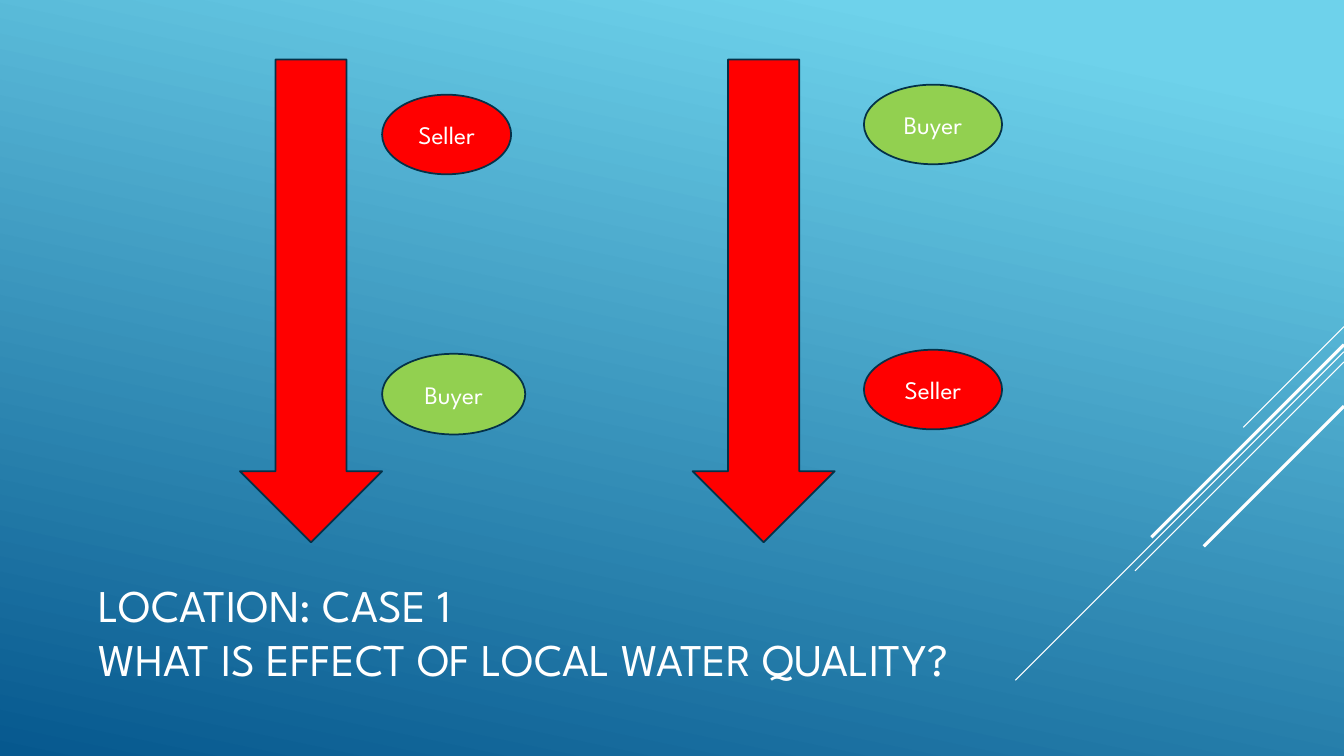
from dataclasses import dataclass

import pptx
import pptx.dml.color
import pptx.enum.shapes
import pptx.enum.text
import pptx.oxml
import pptx.oxml.ns
import pptx.util
from pptx.shapes.autoshape import Shape
from pptx.slide import Slide
from pptx.text.text import _Paragraph

WIDTH = pptx.util.Inches(13.333)
HEIGHT = pptx.util.Inches(7.5)


@dataclass(frozen=True)
class Theme:
    font: str = "League Spartan"
    text: str = "FFFFFF"
    sky: str = "6ED2EB"
    deep: str = "06588E"
    outline: str = "043148"
    seller: str = "FF0000"
    buyer: str = "92D050"
    flow: str = "FF0000"
    title_size: float = 32.4
    title_leading: float = 38.6
    label_size: float = 18
    outline_width: float = 1.25


THEME = Theme()


# Lengths are percentages of the slide's width and height
@dataclass(frozen=True)
class Box:
    left: float
    top: float
    width: float
    height: float


@dataclass(frozen=True)
class Party:
    name: str
    colour: str
    box: Box


@dataclass(frozen=True)
class Ray:
    top: float
    run: float
    weight: float


def across(share: float) -> int:
    return round(WIDTH * share / 100)


def down(share: float) -> int:
    return round(HEIGHT * share / 100)


def rgb(colour: str) -> pptx.dml.color.RGBColor:
    return pptx.dml.color.RGBColor.from_string(colour)


def add_text(paragraph: _Paragraph, text: str, size: float) -> None:
    run = paragraph.add_run()
    run.text = text
    run.font.name = THEME.font
    run.font.size = pptx.util.Pt(size)
    run.font.color.rgb = rgb(THEME.text)


def paint_background(slide: Slide) -> None:
    fill = slide.background.fill
    fill.gradient()
    fill.gradient_angle = 258
    stops = ((0.1, THEME.sky), (1.0, THEME.deep))
    for stop, (position, colour) in zip(fill.gradient_stops, stops):
        stop.position = position
        stop.color.rgb = rgb(colour)


def draw_ray(slide: Slide, ray: Ray) -> None:
    """Draw a 45-degree line falling leftwards from the right edge."""
    run = across(ray.run)
    line = slide.shapes.add_connector(
        pptx.enum.shapes.MSO_CONNECTOR.STRAIGHT,
        WIDTH, down(ray.top), WIDTH - run, down(ray.top) + run)
    line.line.color.rgb = rgb(THEME.text)
    line.line.width = pptx.util.Pt(ray.weight)
    properties = line._element.spPr
    properties.append(pptx.oxml.parse_xml(
        f"<a:effectLst {pptx.oxml.ns.nsdecls('a')}/>"))


def draw_shape(slide: Slide, kind: pptx.enum.shapes.MSO_SHAPE, box: Box, colour: str) -> Shape:
    shape = slide.shapes.add_shape(
        kind, across(box.left), down(box.top), across(box.width), down(box.height))
    shape.shadow.inherit = False
    shape.fill.solid()
    shape.fill.fore_color.rgb = rgb(colour)
    shape.line.color.rgb = rgb(THEME.outline)
    shape.line.width = pptx.util.Pt(THEME.outline_width)
    return shape


def draw_party(slide: Slide, party: Party) -> None:
    oval = draw_shape(slide, pptx.enum.shapes.MSO_SHAPE.OVAL, party.box, party.colour)
    oval.text_frame.vertical_anchor = pptx.enum.text.MSO_ANCHOR.MIDDLE
    paragraph = oval.text_frame.paragraphs[0]
    paragraph.alignment = pptx.enum.text.PP_ALIGN.CENTER
    add_text(paragraph, party.name, THEME.label_size)


def write_title(slide: Slide, lines: tuple[str, ...], box: Box) -> None:
    title = slide.shapes.title
    title.left, title.top = across(box.left), down(box.top)
    title.width, title.height = across(box.width), down(box.height)
    frame = title.text_frame
    frame.word_wrap = True
    frame.auto_size = pptx.enum.text.MSO_AUTO_SIZE.NONE
    frame.vertical_anchor = pptx.enum.text.MSO_ANCHOR.MIDDLE
    paragraph = frame.paragraphs[0]
    paragraph.alignment = pptx.enum.text.PP_ALIGN.LEFT
    paragraph.line_spacing = pptx.util.Pt(THEME.title_leading)
    for index, line in enumerate(lines):
        if index:
            paragraph.add_line_break()
        add_text(paragraph, line, THEME.title_size)


RAYS = (
    Ray(43.2, 7.5, 0.75),
    Ray(46.53, 24.45, 0.75),
    Ray(47.87, 15.55, 0.75),
    Ray(45.6, 14.33, 2.25),
    Ray(53.73, 10.43, 2.25),
)
FLOWS = tuple(Box(left, 7.87, 10.58, 63.87) for left in (17.85, 51.53))
PARTIES = (
    Party("Seller", THEME.seller, Box(28.43, 12.53, 9.6, 10.53)),
    Party("Buyer", THEME.buyer, Box(28.43, 46.8, 10.65, 10.67)),
    Party("Buyer", THEME.buyer, Box(64.28, 11.2, 10.28, 10.53)),
    Party("Seller", THEME.seller, Box(64.28, 46.27, 10.28, 10.53)),
)


def main() -> None:
    deck = pptx.Presentation()
    deck.slide_width, deck.slide_height = WIDTH, HEIGHT
    slide = deck.slides.add_slide(deck.slide_layouts.get_by_name("Title Only"))

    # Backdrop
    paint_background(slide)
    for ray in RAYS:
        draw_ray(slide, ray)

    # Title
    write_title(slide, ("LOCATION: CASE 1", "WHAT IS EFFECT OF LOCAL WATER QUALITY?"),
                Box(6.6, 72.53, 69.98, 22))

    # River flows and the parties along them
    for flow in FLOWS:
        draw_shape(slide, pptx.enum.shapes.MSO_SHAPE.DOWN_ARROW, flow, THEME.flow)
    for party in PARTIES:
        draw_party(slide, party)

    deck.save("out.pptx")


if __name__ == "__main__":
    main()
